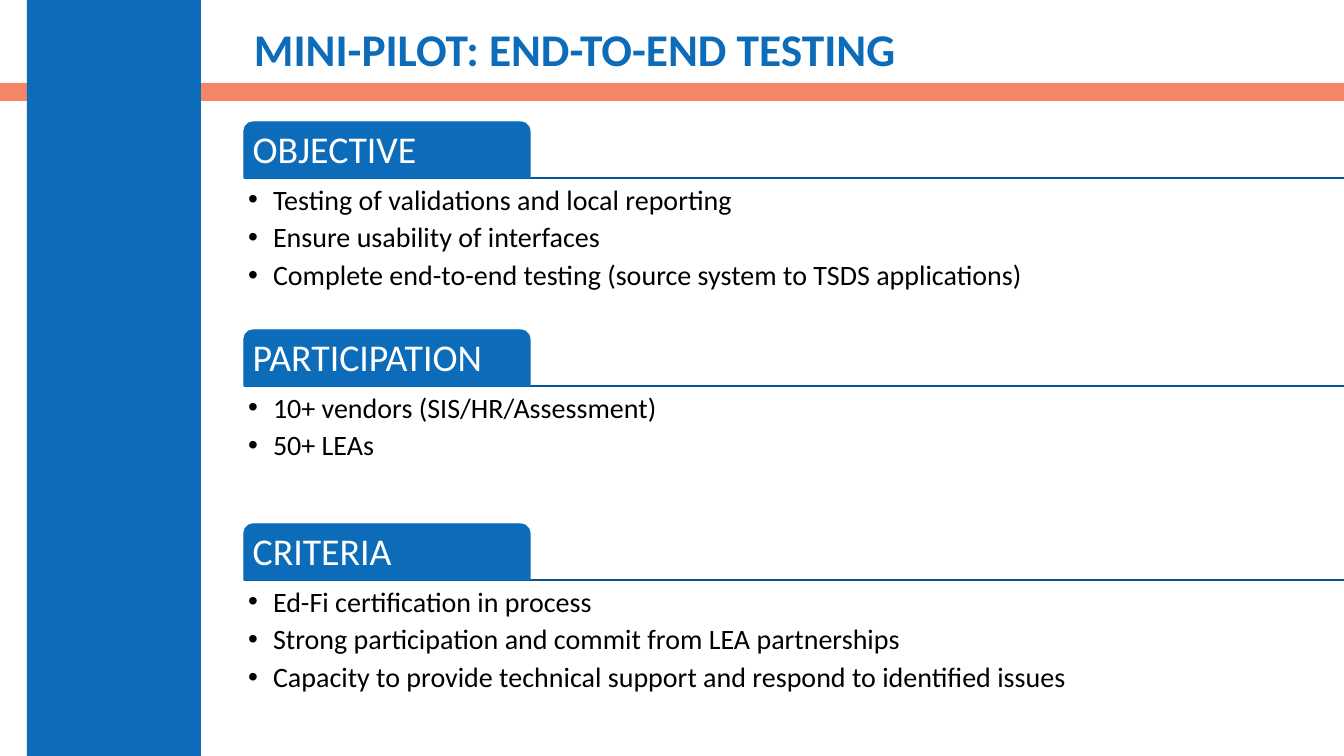
"""Build the mini-pilot slide: a title and three tabbed lists."""
from typing import NamedTuple

from lxml.etree import SubElement as Sub
from pptx import Presentation
from pptx.dml.color import RGBColor
from pptx.enum.shapes import MSO_CONNECTOR as Wire, MSO_SHAPE as Form
from pptx.enum.text import MSO_ANCHOR as Anchor, MSO_AUTO_SIZE as Auto, PP_ALIGN as Align
from pptx.oxml.ns import qn
from pptx.util import Pt

BLUE = RGBColor(0x0D, 0x6C, 0xB9)
NAVY = RGBColor(0x0A, 0x56, 0x94)
CORAL = RGBColor(0xF1, 0x60, 0x38)
WHITE = RGBColor(0xFF, 0xFF, 0xFF)
BLACK = RGBColor(0x00, 0x00, 0x00)
FACE = "Calibri"
SCALE = 9071
WIDE, HIGH = 1344, 756
LEFT = 244
TAB_WIDE, TAB_HIGH = 286, 56


class Part(NamedTuple):
    slot: int
    rule: int
    high: int
    head: str
    items: tuple[str, ...]


PARTS = (
    Part(1, 178, 149, "OBJECTIVE", (
        "Testing of validations and local reporting",
        "Ensure usability of interfaces",
        "Complete end-to-end testing (source system to TSDS applications)")),
    Part(2, 386, 135, "PARTICIPATION", (
        "10+ vendors (SIS/HR/Assessment)",
        "50+ LEAs")),
    Part(3, 580, 112, "CRITERIA", (
        "Ed-Fi certification in process",
        "Strong participation and commit from LEA partnerships",
        "Capacity to provide technical support and respond to identified issues")),
)


def px(count: int) -> int:
    return count * SCALE


def place(shape, left: int, top: int, wide: int, high: int) -> None:
    shape.left, shape.top = px(left), px(top)
    shape.width, shape.height = px(wide), px(high)


def style(para, size: float, color: RGBColor, bold: bool = False) -> None:
    para.alignment = Align.LEFT
    para.space_before = Pt(0)
    font = para.font
    font.name, font.size, font.bold = FACE, Pt(size), bold
    font.color.rgb = color


def frame(shape, inset: int, anchor: Anchor):
    text = shape.text_frame
    text.word_wrap = True
    text.auto_size = Auto.NONE
    text.vertical_anchor = anchor
    text.margin_left = text.margin_right = px(inset)
    text.margin_top = text.margin_bottom = px(inset)
    return text


def block(slide, form: Form, left: int, top: int, wide: int, high: int, color: RGBColor):
    shape = slide.shapes.add_shape(form, px(left), px(top), px(wide), px(high))
    shape.shadow.inherit = False
    shape.fill.solid()
    shape.fill.fore_color.rgb = color
    shape.line.fill.background()
    return shape


def draw_bars(slide) -> None:
    band = block(slide, Form.RECTANGLE, 0, 83, WIDE, 18, CORAL)
    tint = band.fill._xPr.find(qn("a:solidFill"))[0]
    Sub(tint, qn("a:alpha"), val="76000")
    block(slide, Form.RECTANGLE, 27, 0, 174, HIGH, BLUE)


def draw_title(slide) -> None:
    title = slide.shapes.title
    place(title, LEFT, 22, 1049, 60)
    text = frame(title, 10, Anchor.MIDDLE)
    text.text = "MINI-PILOT: END-TO-END TESTING"
    para = text.paragraphs[0]
    para.line_spacing = 0.9
    style(para, 32.4, BLUE, True)


def draw_rule(slide, y: int) -> None:
    rule = slide.shapes.add_connector(Wire.STRAIGHT, px(LEFT), px(y), px(WIDE), px(y))
    rule.line.color.rgb = NAVY
    rule.line.width = Pt(1)
    Sub(rule._element.spPr, qn("a:effectLst"))


def draw_tab(slide, part: Part) -> None:
    tab = block(slide, Form.ROUND_2_SAME_RECTANGLE, LEFT, part.rule - TAB_HIGH,
                TAB_WIDE, TAB_HIGH, BLUE)
    tab.line.color.rgb = BLUE
    tab.line.width = Pt(1)
    text = frame(tab, 6, Anchor.MIDDLE)
    text.text = part.head
    para = text.paragraphs[0]
    para.line_spacing = 0.9
    style(para, 27, WHITE)


def draw_list(slide, part: Part) -> None:
    body = next(hold for hold in slide.placeholders
                if hold.placeholder_format.idx == part.slot)
    place(body, LEFT, part.rule, WIDE - LEFT, part.high)
    text = frame(body, 4, Anchor.TOP)
    text.text = "\n".join(part.items)
    for para in text.paragraphs:
        props = para._p.get_or_add_pPr()
        props.set("marL", str(px(25)))
        props.set("indent", str(px(-25)))
        Sub(props, qn("a:buFont"), typeface="Arial")
        Sub(props, qn("a:buChar"), char="•")
        para.space_after = Pt(3)
        style(para, 20, BLACK)


def main() -> None:
    deck = Presentation()
    deck.slide_width, deck.slide_height = px(WIDE), px(HIGH)
    slide = deck.slides.add_slide(deck.slide_layouts[4])
    draw_bars(slide)
    draw_title(slide)
    for part in PARTS:
        draw_rule(slide, part.rule)
        draw_tab(slide, part)
        draw_list(slide, part)
    slots = {part.slot for part in PARTS} | {0}
    for hold in list(slide.placeholders):
        if hold.placeholder_format.idx not in slots:
            hold._element.getparent().remove(hold._element)
    deck.save("out.pptx")


if __name__ == "__main__":
    main()
